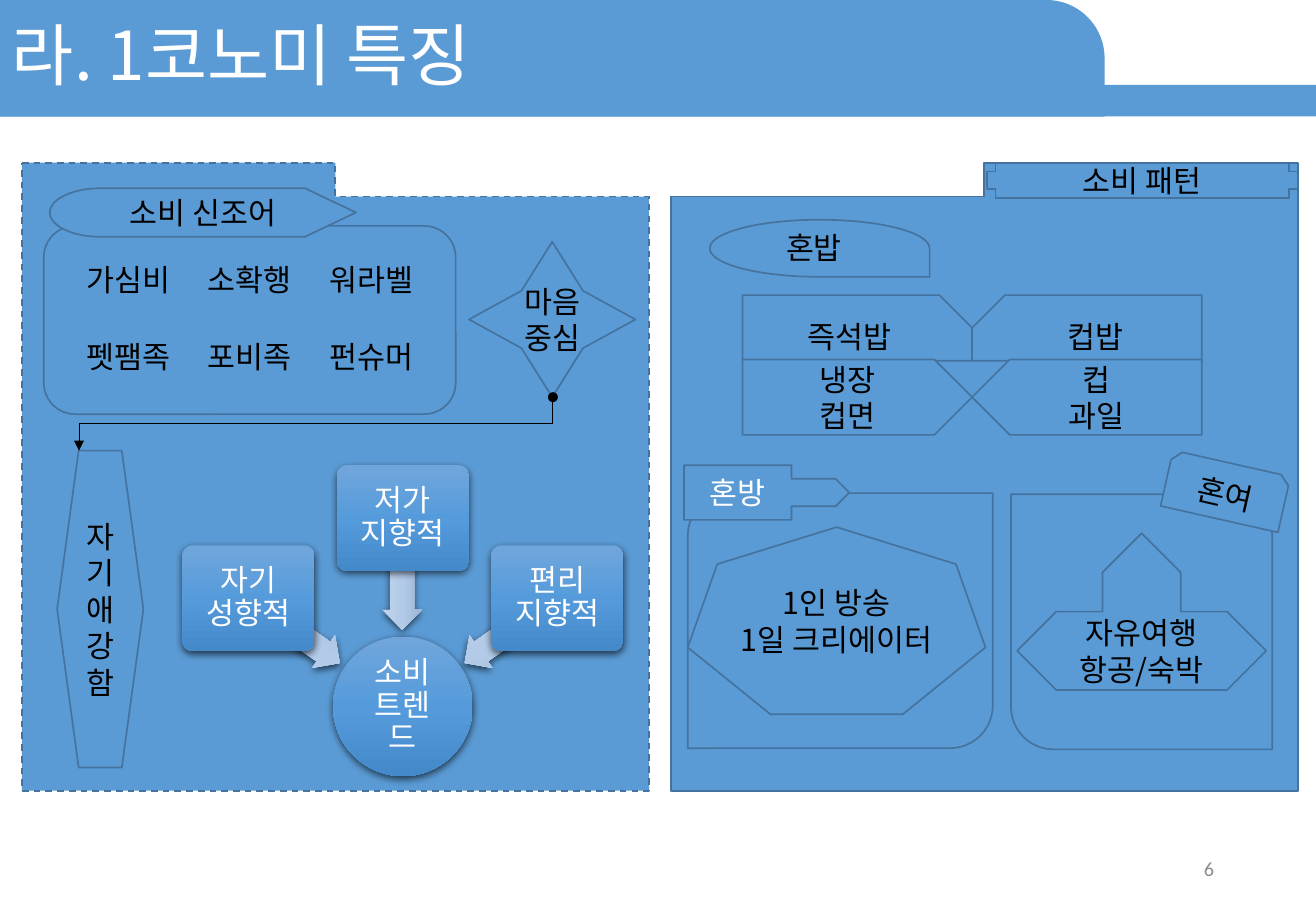
from dataclasses import dataclass
from itertools import product
from typing import Any, Optional

from pptx import Presentation
from pptx import util as u
from pptx.dml import color
from pptx.enum import dml, shapes, text
from pptx.oxml import ns, parse_xml

PX = 9144  # 100 px to the inch
Kind = shapes.MSO_SHAPE
Box = tuple[int, int, int, int]


@dataclass(frozen=True)
class Theme:
    blue: str = "5B9BD5"
    edge: str = "43739E"
    ink: str = "000000"
    white: str = "FFFFFF"
    gray: str = "8C8C8C"
    node: tuple = ("71A6DB", "559BDB", "448ACA")
    arrow: tuple = ("C0D2EB", "B3CBE9", "9BB4D3")
    face: str = "Noto Sans CJK KR"
    plain: str = "Calibri"
    title: int = 40
    body: int = 18
    small: int = 12


T = Theme()


@dataclass
class Item:
    """A preset shape; \\n in its words parts paragraphs, \\v parts lines."""
    kind: Any
    box: Box
    words: str = ""
    ink: str = T.ink
    size: int = T.body
    align: Any = text.PP_ALIGN.CENTER
    adj: tuple = ()
    flip: str = ""
    turn: float = 0
    edge: bool = True
    dash: bool = False
    grad: Optional[tuple] = None
    inset: Optional[int] = None
    space: Optional[float] = None
    wrap: bool = True


def emu(box: tuple[int, ...]) -> list[u.Emu]:
    return [u.Emu(n * PX) for n in box]


def rgb(code: str) -> color.RGBColor:
    return color.RGBColor.from_string(code)


def node(xml: str) -> Any:
    return parse_xml(xml.replace(" ", f" {ns.nsdecls('a')} ", 1))


def write(frame: Any, words: str, *, ink: str = T.ink, size: int = T.body,
          face: str = T.face, align: Any = text.PP_ALIGN.CENTER,
          space: Optional[float] = None, inset: Optional[int] = None,
          wrap: bool = True, anchor: Any = text.MSO_ANCHOR.MIDDLE) -> None:
    frame.word_wrap = wrap
    frame.vertical_anchor = anchor
    if inset is not None:
        frame.margin_left = frame.margin_right = u.Emu(inset * PX)
        frame.margin_top = frame.margin_bottom = u.Emu(inset * PX)
    for i, line in enumerate(words.split("\n")):
        para = frame.paragraphs[0] if i == 0 else frame.add_paragraph()
        para.text = line
        para.alignment = align
        if space:
            para.line_spacing = space
        for run in para.runs:
            run.font.size = u.Pt(size)
            run.font.name = face
            run.font.color.rgb = rgb(ink)
            latin = run.font._element.find(ns.qn("a:latin"))
            latin.addnext(node(f'<a:ea typeface="{face}"/>'))


def gloss(shape: Any, stops: tuple) -> None:
    """Vertical gradient with a soft shadow below."""
    marks = "".join(f'<a:gs pos="{i * 50000}"><a:srgbClr val="{c}"/></a:gs>'
                    for i, c in enumerate(stops))
    props = shape._element.spPr
    props.find(ns.qn("a:prstGeom")).addnext(node(
        f'<a:gradFill rotWithShape="1"><a:gsLst>{marks}</a:gsLst>'
        '<a:lin ang="5400000" scaled="0"/></a:gradFill>'))
    props.find(ns.qn("a:effectLst")).append(node(
        '<a:outerShdw blurRad="57150" dist="19050" dir="5400000" algn="ctr" '
        f'rotWithShape="0"><a:srgbClr val="{T.ink}"><a:alpha val="63000"/>'
        '</a:srgbClr></a:outerShdw>'))


def draw(host: Any, item: Item) -> None:
    shape = host.add_shape(item.kind, *emu(item.box))
    shape.shadow.inherit = False
    for i, value in enumerate(item.adj):
        shape.adjustments[i] = value
    shape.rotation = item.turn
    if item.flip:
        shape._element.spPr.xfrm.set(f"flip{item.flip}", "1")
    if item.grad:
        gloss(shape, item.grad)
    else:
        shape.fill.solid()
        shape.fill.fore_color.rgb = rgb(T.blue)
    if item.edge:
        shape.line.color.rgb = rgb(T.edge)
        shape.line.width = u.Pt(1)
        if item.dash:
            shape.line.dash_style = dml.MSO_LINE.DASH
    else:
        shape.line.fill.background()
    if item.words:
        write(shape.text_frame, item.words, ink=item.ink, size=item.size,
              align=item.align, space=item.space, inset=item.inset, wrap=item.wrap)


def elbow(host: Any) -> None:
    """Bent arrow from the star down to the hexagon."""
    line = host.add_connector(shapes.MSO_CONNECTOR.ELBOW, *emu((238, 154, 282, 544)))
    line.line.color.rgb = rgb(T.ink)
    line.line.width = u.Pt(0.5)
    props = line._element.spPr
    props.find(ns.qn("a:xfrm")).set("rot", "5400000")
    stroke = props.find(ns.qn("a:ln"))
    stroke.append(node('<a:headEnd type="oval"/>'))
    stroke.append(node('<a:tailEnd type="triangle"/>'))
    props.append(node("<a:effectLst />"))


# Header band
HEAD = [
    Item(Kind.RECTANGLE, (0, 70, 1083, 26), edge=False),
    Item(Kind.ROUND_1_RECTANGLE, (0, 0, 909, 96), "라. 1코노미 특징", T.white, T.title,
         text.PP_ALIGN.LEFT, adj=(0.5,), edge=False, space=0.9),
]

# Left panel: new words, star, hexagon, trend diagram
WORDS = ["가심비", "소확행", "워라벨", "펫팸족", "포비족", "펀슈머"]
TRENDS = ["자기\v성향적", "저가\v지향적", "편리\v지향적"]
LEFT = [
    Item(Kind.CORNER, (18, 134, 516, 517), adj=(0.948, 0.5), dash=True),
    Item(Kind.ROUNDED_RECTANGLE, (36, 186, 339, 155)),
    *(Item(Kind.RECTANGLE, (60 + 100 * col, 204 + 64 * row, 91, 55), word,
           edge=False, inset=7, space=0.9)
      for (row, col), word in zip(product(range(2), range(3)), WORDS)),
    Item(Kind.FLOWCHART_DISPLAY, (41, 155, 252, 40), "소비 신조어", flip="H"),
    Item(Kind.STAR_4_POINT, (386, 199, 137, 128), "마음\n중심", adj=(0.261,), wrap=False),
    Item(Kind.HEXAGON, (47, 371, 71, 261), "자기애강함"),
    Item(Kind.OVAL, (274, 524, 115, 115), "소비\v트렌\v드", T.white, edge=False,
         grad=T.node, inset=1, space=0.9),
]
for i, trend in enumerate(TRENDS):
    side = i != 1
    LEFT += [
        Item(Kind.LEFT_ARROW, (196 + 89 * i, 503 if side else 456, 92, 33),
             adj=(0.6, 0.5), turn=215 + 55 * i, edge=False, grad=T.arrow),
        Item(Kind.ROUNDED_RECTANGLE, (150 + 127 * i, 449 if side else 383, 109, 87),
             trend, T.white, adj=(0.1,), edge=False, grad=T.node, inset=4, space=0.9),
    ]

# Right panel: spending patterns
RIGHT = [
    Item(Kind.CORNER, (552, 134, 516, 517), adj=(0.948, 0.5), flip="H"),
    Item(Kind.CROSS, (812, 134, 256, 29), "소비 패턴"),
    Item(Kind.TEAR, (584, 181, 181, 47), flip="V"),
    Item(Kind.SNIP_1_RECTANGLE, (611, 243, 189, 54), "즉석밥", adj=(0.5,)),
    Item(Kind.SNIP_1_RECTANGLE, (800, 243, 189, 54), "컵밥", adj=(0.5,), flip="H"),
    Item(Kind.PENTAGON, (611, 296, 189, 62), "냉장\n컵면"),
    Item(Kind.PENTAGON, (800, 296, 189, 62), "컵\n과일", flip="H"),
    Item(Kind.ROUND_2_DIAG_RECTANGLE, (832, 407, 215, 210), flip="H"),
    Item(Kind.ROUND_2_DIAG_RECTANGLE, (566, 406, 251, 210)),
    Item(Kind.RIGHT_ARROW_CALLOUT, (563, 383, 136, 45), "혼방", T.white,
         adj=(0.5, 0.25, 0.25, 0.65)),
    Item(Kind.SNIP_2_SAME_RECTANGLE, (959, 381, 99, 47), "혼여", turn=12.7),
    Item(Kind.HEPTAGON, (566, 434, 245, 154), "1인 방송\n1일 크리에이터"),
    Item(Kind.LEFT_RIGHT_UP_ARROW, (837, 439, 205, 129), "자유여행\n항공/숙박",
         adj=(0.5, 0.25, 0.25)),
]


def main() -> None:
    deck = Presentation()
    deck.slide_width, deck.slide_height = emu((1083, 750))
    slide = deck.slides.add_slide(deck.slide_layouts[6])
    for item in HEAD:
        draw(slide.shapes, item)
    left = slide.shapes.add_group_shape().shapes
    for item in LEFT:
        draw(left, item)
    elbow(left)
    right = slide.shapes.add_group_shape().shapes
    for item in RIGHT:
        draw(right, item)
    meal = right.add_textbox(*emu((637, 184, 75, 40)))
    write(meal.text_frame, "혼밥", align=text.PP_ALIGN.LEFT, anchor=text.MSO_ANCHOR.TOP)
    # Page number
    page = slide.shapes.add_textbox(*emu((765, 695, 244, 40)))
    write(page.text_frame, "6", ink=T.gray, size=T.small, face=T.plain,
          align=text.PP_ALIGN.RIGHT)
    deck.save("out.pptx")


if __name__ == "__main__":
    main()
